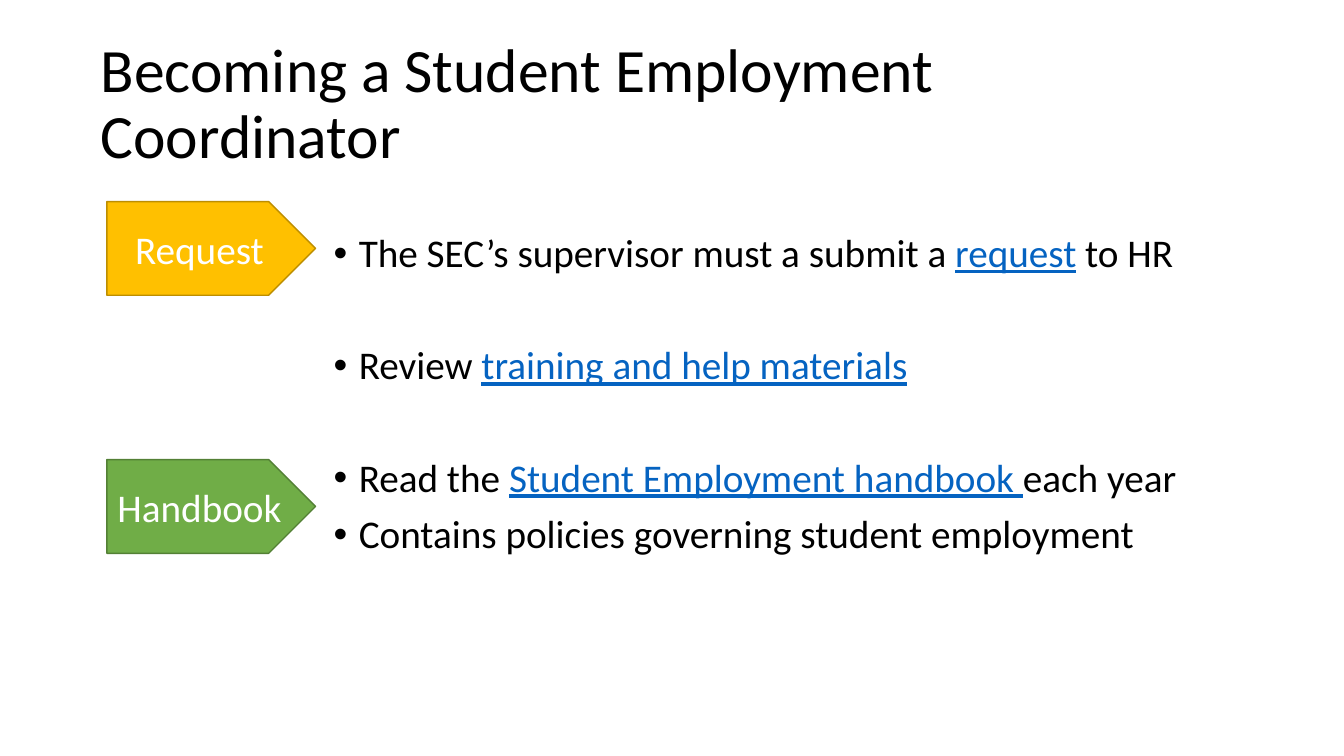
from lxml.etree import SubElement
from pptx import Presentation
from pptx.dml.color import RGBColor
from pptx.enum.shapes import MSO_SHAPE
from pptx.enum.text import MSO_ANCHOR, PP_ALIGN
from pptx.oxml.ns import qn
from pptx.util import Inches, Pt

BLACK = RGBColor(0x00, 0x00, 0x00)
WHITE = RGBColor(0xFF, 0xFF, 0xFF)
LINK_BLUE = RGBColor(0x05, 0x63, 0xC1)
GOLD = RGBColor(0xFF, 0xC0, 0x00)
DARK_GOLD = RGBColor(0xBD, 0x8E, 0x00)
GREEN = RGBColor(0x70, 0xAD, 0x47)
DARK_GREEN = RGBColor(0x53, 0x80, 0x35)

# Each bullet: space before in points, then (text, looks like a link) runs
BULLETS = [
    (10, [("The SEC’s supervisor must a submit a ", False), ("request", True),
          (" to HR", False)]),
    (50, [("Review ", False), ("training and help materials", True)]),
    (50, [("Read the ", False), ("Student Employment handbook ", True),
          ("each year", False)]),
    (10, [("Contains policies governing student employment", False)]),
]

# Each label: text, top, fill, outline
LABELS = [
    ("Request", 2, GOLD, DARK_GOLD),
    ("Handbook", 4.56, GREEN, DARK_GREEN),
]


def apply_format(target, values):
    for name, value in values.items():
        setattr(target, name, value)


class SlideBuilder:
    font_name = "Calibri"
    title_size = Pt(44)
    body_size = Pt(28)

    def __init__(self, slide):
        self.slide = slide

    def add_run(self, paragraph, text, size, color, underline=False):
        run = paragraph.add_run()
        run.text = text
        apply_format(run.font, {"name": self.font_name, "size": size,
                                "underline": underline})
        run.font.color.rgb = color

    def add_text_frame(self, left, top, width, height, anchor):
        box = self.slide.shapes.add_textbox(
            Inches(left), Inches(top), Inches(width), Inches(height))
        apply_format(box.text_frame, {"word_wrap": True, "vertical_anchor": anchor})
        return box.text_frame

    def add_title(self, text, *position):
        frame = self.add_text_frame(*position, MSO_ANCHOR.MIDDLE)
        paragraph = frame.paragraphs[0]
        paragraph.line_spacing = 0.9
        self.add_run(paragraph, text, self.title_size, BLACK)

    def add_bullets(self, bullets, *position):
        frame = self.add_text_frame(*position, MSO_ANCHOR.TOP)
        for index, (space_before, runs) in enumerate(bullets):
            paragraph = frame.add_paragraph() if index else frame.paragraphs[0]
            apply_format(paragraph, {"line_spacing": 0.9,
                                     "space_before": Pt(space_before)})
            properties = paragraph._p.get_or_add_pPr()
            properties.set("marL", str(Inches(0.25)))
            properties.set("indent", str(-Inches(0.25)))
            SubElement(properties, qn("a:buFont"), typeface="Arial")
            SubElement(properties, qn("a:buChar"), char="•")
            for text, is_link in runs:
                color = LINK_BLUE if is_link else BLACK
                self.add_run(paragraph, text, self.body_size, color, is_link)

    def add_label(self, text, top, fill, outline):
        shape = self.slide.shapes.add_shape(
            MSO_SHAPE.PENTAGON, Inches(1.06), Inches(top), Inches(2.07), Inches(0.93))
        shape.shadow.inherit = False
        shape.fill.solid()
        shape.fill.fore_color.rgb = fill
        shape.line.color.rgb = outline
        shape.line.width = Pt(1)
        shape.text_frame.vertical_anchor = MSO_ANCHOR.MIDDLE
        paragraph = shape.text_frame.paragraphs[0]
        paragraph.alignment = PP_ALIGN.CENTER
        self.add_run(paragraph, text, self.body_size, WHITE)


def main():
    presentation = Presentation()
    apply_format(presentation, {"slide_width": Inches(13.33),
                                "slide_height": Inches(7.5)})
    builder = SlideBuilder(presentation.slides.add_slide(presentation.slide_layouts[6]))

    # Heading and bullet list
    builder.add_title("Becoming a Student Employment Coordinator", 0.9, 0.32, 11.5, 1.45)
    builder.add_bullets(BULLETS, 3.21, 2.27, 9.19, 4.6)

    # Arrow labels beside the list
    for label in LABELS:
        builder.add_label(*label)

    presentation.save("out.pptx")


if __name__ == "__main__":
    main()
